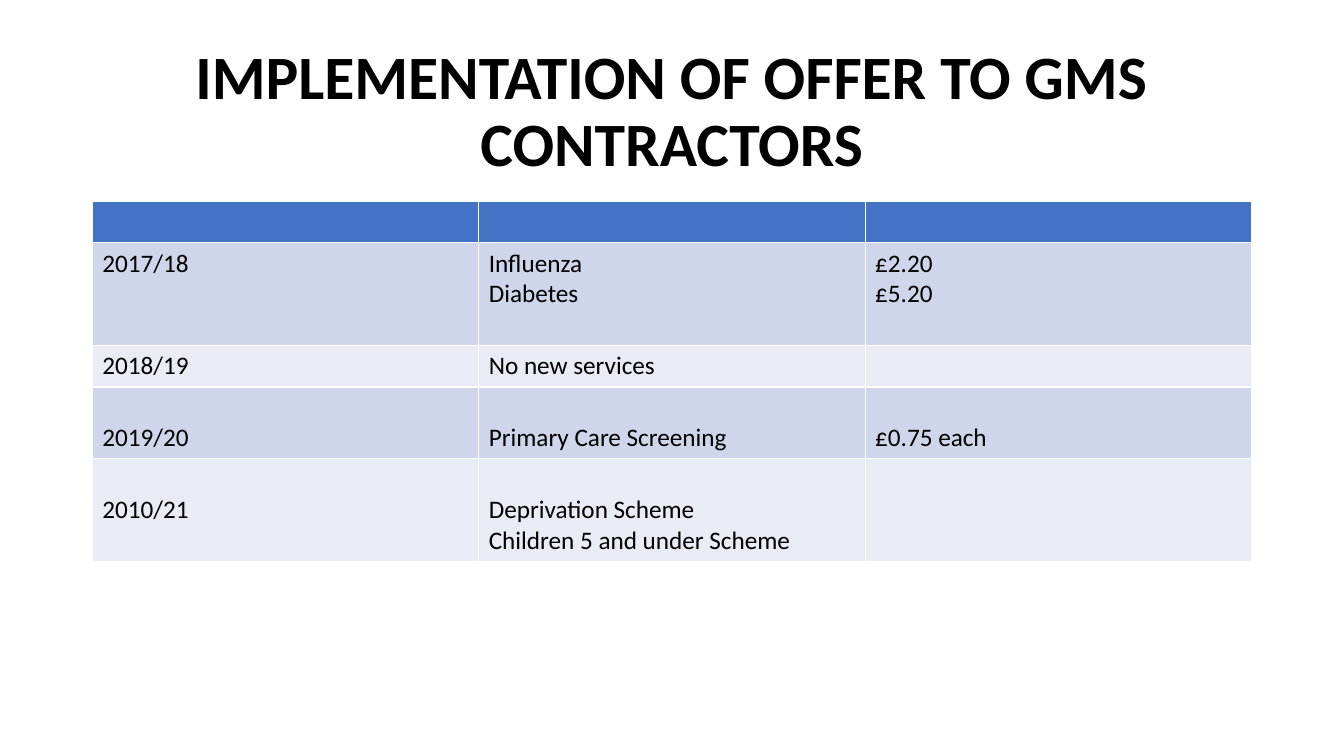
from pptx import Presentation
from pptx.dml.color import RGBColor
from pptx.enum.text import MSO_ANCHOR, MSO_AUTO_SIZE, PP_ALIGN
from pptx.util import Pt

PX = 9525
FONT = "Calibri"
BLACK = RGBColor(0x00, 0x00, 0x00)
HEADER_BLUE = RGBColor(0x44, 0x72, 0xC4)
BAND_DARK = RGBColor(0xCF, 0xD5, 0xEA)
BAND_LIGHT = RGBColor(0xE9, 0xEB, 0xF5)
MIDDLE = MSO_ANCHOR.MIDDLE
NO_AUTOFIT = MSO_AUTO_SIZE.NONE
CENTER = PP_ALIGN.CENTER

LEFT, WIDTH = 88, 1104
CELL_MARGIN = 5
LINE_HEIGHT = 29

OFFERS = [
    (39, 0, ["", "", ""]),
    (98, 0, ["2017/18", "Influenza\nDiabetes", "£2.20\n£5.20"]),
    (39, 0, ["2018/19", "No new services", ""]),
    (68, 1, ["2019/20", "Primary Care Screening", "£0.75 each"]),
    (97, 1, ["2010/21", "Deprivation Scheme\nChildren 5 and under Scheme", ""]),
]


def px(length):
    return length * PX


def style_text(frame, size, bold):
    for para in frame.paragraphs:
        para.font.size = Pt(size)
        for span in para.runs:
            span.font.name = FONT
            span.font.size = Pt(size)
            span.font.bold = bold
            span.font.color.rgb = BLACK


def set_title(page, text):
    title = page.shapes.title
    title.left, title.top = px(LEFT), px(38)
    title.width, title.height = px(WIDTH), px(139)
    frame = title.text_frame
    frame.text = text
    frame.word_wrap = True
    frame.auto_size = NO_AUTOFIT
    frame.vertical_anchor = MIDDLE
    frame.paragraphs[0].alignment = CENTER
    frame.paragraphs[0].line_spacing = 0.9
    style_text(frame, 44, True)


def fill_cell(cell, text, color, lines_above):
    cell.fill.solid()
    cell.fill.fore_color.rgb = color
    cell.margin_top = px(CELL_MARGIN + lines_above * LINE_HEIGHT)
    cell.margin_bottom = px(CELL_MARGIN)
    cell.text_frame.text = text
    style_text(cell.text_frame, 18, False)


def add_offer_table(page, offers):
    height = sum(offer[0] for offer in offers)
    columns = len(offers[0][2])
    frame = page.shapes.add_table(
        len(offers), columns, px(LEFT), px(192), px(WIDTH), px(height))
    table = frame.table
    for index, (row_height, lines_above, texts) in enumerate(offers):
        table.rows[index].height = px(row_height)
        band = BAND_DARK if index % 2 else BAND_LIGHT
        color = band if index else HEADER_BLUE
        for column, text in enumerate(texts):
            fill_cell(table.cell(index, column), text, color, lines_above)


def main():
    deck = Presentation()
    deck.slide_width, deck.slide_height = px(1280), px(720)
    page = deck.slides.add_slide(deck.slide_layouts[5])
    set_title(page, "IMPLEMENTATION OF OFFER TO GMS CONTRACTORS")
    add_offer_table(page, OFFERS)
    deck.save("out.pptx")


if __name__ == "__main__":
    main()
